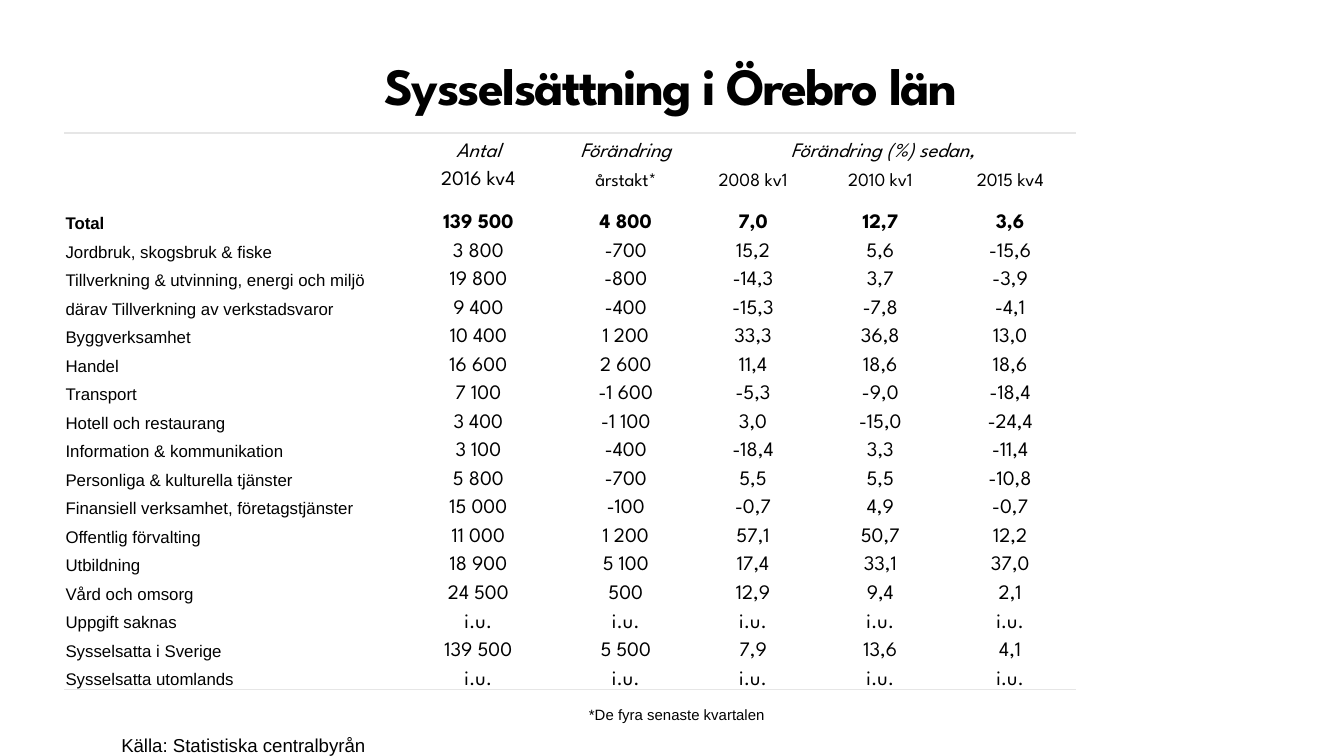
from lxml.etree import SubElement
from pptx import Presentation
from pptx.dml.color import RGBColor as RGB
from pptx.enum.text import MSO_ANCHOR as ANCHOR, MSO_AUTO_SIZE as AUTO, PP_ALIGN as ALIGN
from pptx.oxml import parse_xml
from pptx.oxml.ns import nsdecls, qn
from pptx.util import Pt

COLORS = {"text": "000000", "rule": "E6E6E6"}
HEAD, BODY = "League Spartan", "Arial"
NO_STYLE_NO_GRID = "{2D5ABB26-0587-4C30-8999-92F81FD0307C}"
COL_WIDTHS = [177, 89.8, 68.2, 68.2, 68.2, 71]
ROW_HEIGHT, TOTAL_HEIGHT = 15.28, 23
ROWS = [
    ["", "Antal", "Förändring", "Förändring (%) sedan,", "", ""],
    ["", "2016 kv4", "årstakt*", "2008 kv1", "2010 kv1", "2015 kv4"],
    ["Total", "139 500", "4 800", "7,0", "12,7", "3,6"],
    ["Jordbruk, skogsbruk & fiske", "3 800", "-700", "15,2", "5,6", "-15,6"],
    ["Tillverkning & utvinning, energi och miljö", "19 800", "-800", "-14,3", "3,7", "-3,9"],
    ["därav Tillverkning av verkstadsvaror", "9 400", "-400", "-15,3", "-7,8", "-4,1"],
    ["Byggverksamhet", "10 400", "1 200", "33,3", "36,8", "13,0"],
    ["Handel", "16 600", "2 600", "11,4", "18,6", "18,6"],
    ["Transport", "7 100", "-1 600", "-5,3", "-9,0", "-18,4"],
    ["Hotell och restaurang", "3 400", "-1 100", "3,0", "-15,0", "-24,4"],
    ["Information & kommunikation", "3 100", "-400", "-18,4", "3,3", "-11,4"],
    ["Personliga & kulturella tjänster", "5 800", "-700", "5,5", "5,5", "-10,8"],
    ["Finansiell verksamhet, företagstjänster", "15 000", "-100", "-0,7", "4,9", "-0,7"],
    ["Offentlig förvalting", "11 000", "1 200", "57,1", "50,7", "12,2"],
    ["Utbildning", "18 900", "5 100", "17,4", "33,1", "37,0"],
    ["Vård och omsorg", "24 500", "500", "12,9", "9,4", "2,1"],
    ["Uppgift saknas"] + ["i.u."] * 5,
    ["Sysselsatta i Sverige", "139 500", "5 500", "7,9", "13,6", "4,1"],
    ["Sysselsatta utomlands"] + ["i.u."] * 5,
]


def style_run(r, font, size, bold=False, italic=False):
    r.font.name, r.font.size = font, Pt(size)
    r.font.bold, r.font.italic = bold, italic
    r.font.color.rgb = RGB.from_string(COLORS["text"])


def clear_margins(tf):
    tf.margin_left = tf.margin_top = tf.margin_right = tf.margin_bottom = 0


def add_title(s, text, left, top, width, height):
    sp = s.shapes.title
    sp.left, sp.top, sp.width, sp.height = Pt(left), Pt(top), Pt(width), Pt(height)
    tf = sp.text_frame
    clear_margins(tf)
    tf.auto_size, tf.vertical_anchor = AUTO.NONE, ANCHOR.TOP
    tf.text = text
    p = tf.paragraphs[0]
    p.alignment = ALIGN.LEFT
    r = p.runs[0]
    style_run(r, HEAD, 28, bold=True)
    r.font._element.set("spc", "-90")


def add_note(s, text, size, left, top, width, height):
    tf = s.shapes.add_textbox(Pt(left), Pt(top), Pt(width), Pt(height)).text_frame
    clear_margins(tf)
    tf.word_wrap = True
    tf.text = text
    p = tf.paragraphs[0]
    p.line_spacing = Pt(24)
    style_run(p.runs[0], BODY, size)


def add_rule(cell, side):
    """Draw a 1 pt border on one side of a cell: T or B."""
    cell._tc.get_or_add_tcPr().insert(0, parse_xml(
        f'<a:ln{side} {nsdecls("a")} w="{Pt(1)}"><a:solidFill>'
        f'<a:srgbClr val="{COLORS["rule"]}"/></a:solidFill></a:ln{side}>'))


def fill_cell(cell, text, row, col):
    cell.fill.background()
    cell.vertical_anchor = ANCHOR.BOTTOM
    cell.margin_left = cell.margin_right = cell.margin_top = Pt(0.72)
    cell.margin_bottom = 0
    p = cell.text_frame.paragraphs[0]
    if not text:
        SubElement(p._p, qn("a:endParaRPr"), sz="900")
        return
    p.text = text
    p.alignment = ALIGN.CENTER if col else ALIGN.LEFT
    size = 9 if col == 0 else 10 if row == 1 and col > 1 else 11
    style_run(p.runs[0], HEAD if col else BODY, size, bold=row == 2, italic=row == 0)


def add_employment_table(s, left, top, width, height):
    tbl = s.shapes.add_table(len(ROWS), len(COL_WIDTHS), Pt(left), Pt(top),
                             Pt(width), Pt(height)).table
    tbl.first_row = tbl.horz_banding = False
    tbl._tbl.tblPr.find(qn("a:tableStyleId")).text = NO_STYLE_NO_GRID
    for column, w in zip(tbl.columns, COL_WIDTHS):
        column.width = Pt(w)
    for i, values in enumerate(ROWS):
        tbl.rows[i].height = Pt(TOTAL_HEIGHT if i == 2 else ROW_HEIGHT)
        for j, text in enumerate(values):
            fill_cell(tbl.cell(i, j), text, i, j)
    for j in range(len(COL_WIDTHS)):
        add_rule(tbl.cell(0, j), "T")
        add_rule(tbl.cell(len(ROWS) - 1, j), "B")
    tbl.cell(0, 3).merge(tbl.cell(0, 5))


def main():
    prs = Presentation()
    prs.slide_width, prs.slide_height = Pt(720), Pt(405)
    s = prs.slides.add_slide(prs.slide_layouts[5])
    add_title(s, "Sysselsättning i Örebro län", 206, 28.5, 662.4, 57.6)
    add_note(s, "Källa: Statistiska centralbyrån", 10, 65, 381.3, 150, 24)
    add_employment_table(s, 34.4, 71.4, sum(COL_WIDTHS), 298)
    add_note(s, "*De fyra senaste kvartalen", 8, 315.5, 363.8, 110, 24)
    prs.save("out.pptx")


if __name__ == "__main__":
    main()
